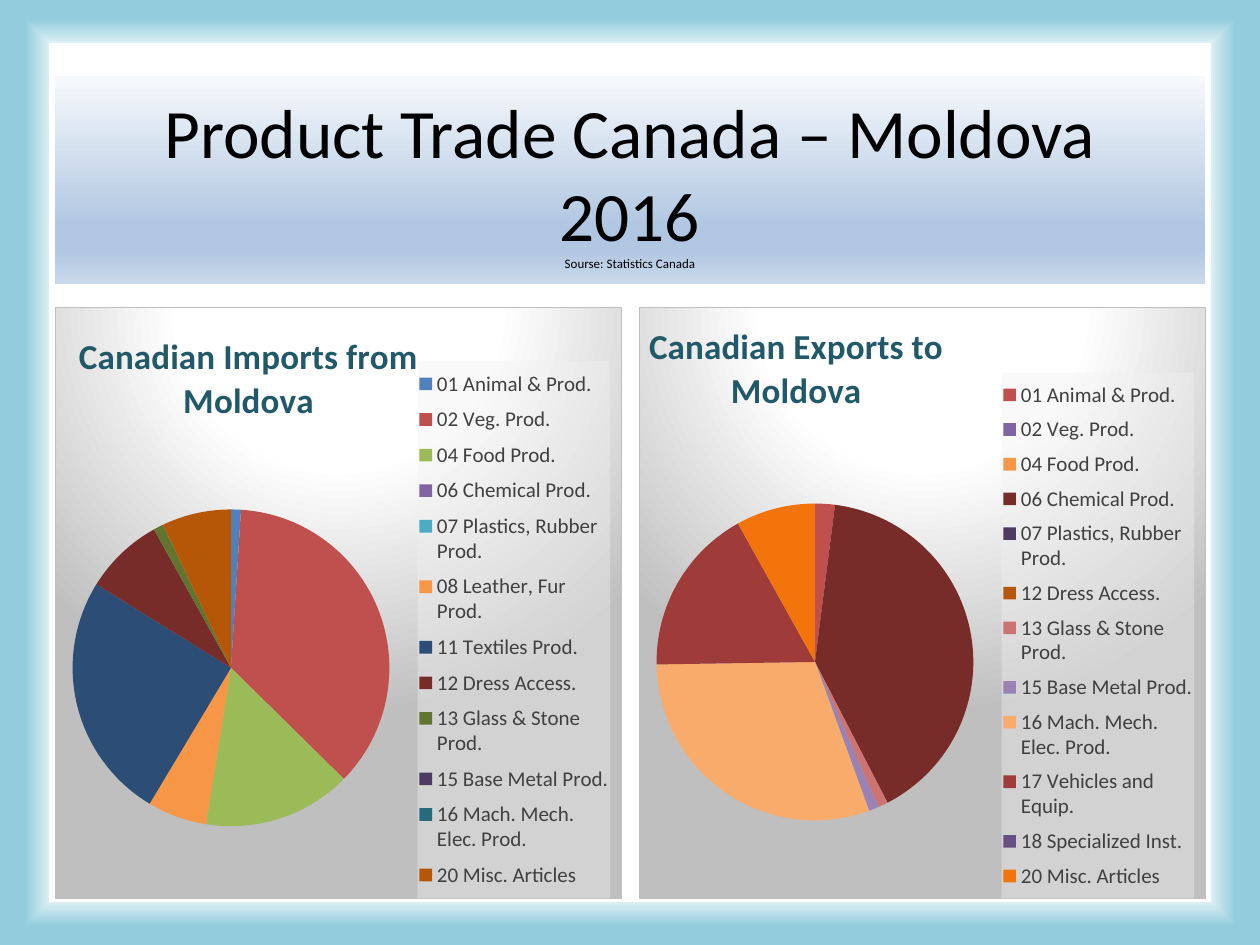
import pptx
import pptx.chart.data
import pptx.dml.color
import pptx.enum.chart
import pptx.enum.text
import pptx.oxml
import pptx.oxml.ns
import pptx.util

RGBColor = pptx.dml.color.RGBColor
BLACK = RGBColor(0x00, 0x00, 0x00)
WHITE = RGBColor(0xFF, 0xFF, 0xFF)
SILVER = RGBColor(0xBF, 0xBF, 0xBF)
PALE_GRAY = RGBColor(0xF2, 0xF2, 0xF2)
DARK_GRAY = RGBColor(0x40, 0x40, 0x40)
TEAL = RGBColor(0x21, 0x59, 0x68)
PALE_AQUA = RGBColor(0xDB, 0xEE, 0xF4)
AQUA = RGBColor(0x93, 0xCD, 0xDD)
ICE = RGBColor(0xF6, 0xF9, 0xFC)
SKY = RGBColor(0xB0, 0xC6, 0xE1)
MIST = RGBColor(0xCA, 0xD9, 0xEB)

NAMESPACES = pptx.oxml.ns.nsdecls("a", "c", "p")
LINEAR_DOWN = '<a:lin ang="5400000" scaled="0"/>'

IMPORTS = [
    ("01 Animal & Prod.", 1, "4F81BD"),
    ("02 Veg. Prod.", 36, "C0504D"),
    ("04 Food Prod.", 15, "9BBB59"),
    ("06 Chemical Prod.", 0, "8064A2"),
    ("07 Plastics, Rubber Prod.", 0, "4BACC6"),
    ("08 Leather, Fur Prod.", 6, "F79646"),
    ("11 Textiles Prod.", 25, "2C4D75"),
    ("12 Dress Access.", 8, "772C2A"),
    ("13 Glass & Stone Prod.", 1, "5F7530"),
    ("15 Base Metal Prod.", 0, "4D3B62"),
    ("16 Mach. Mech. Elec. Prod.", 0, "276A7C"),
    ("20 Misc. Articles", 7, "B65708"),
]
EXPORTS = [
    ("01 Animal & Prod.", 2, "C0504D"),
    ("02 Veg. Prod.", 0, "8064A2"),
    ("04 Food Prod.", 0, "F79646"),
    ("06 Chemical Prod.", 40, "772C2A"),
    ("07 Plastics, Rubber Prod.", 0, "4D3B62"),
    ("12 Dress Access.", 0, "B65708"),
    ("13 Glass & Stone Prod.", 1, "CD7371"),
    ("15 Base Metal Prod.", 1, "9983B5"),
    ("16 Mach. Mech. Elec. Prod.", 30, "F9AB6B"),
    ("17 Vehicles and Equip.", 17, "9F3B38"),
    ("18 Specialized Inst.", 0, "664F83"),
    ("20 Misc. Articles", 8, "F3740B"),
]


def px(length):
    return pptx.util.Emu(round(length * 914400 / 126))


def element(xml):
    tag, rest = xml.split(">", 1)
    return pptx.oxml.parse_xml(f"{tag} {NAMESPACES}>{rest}")


def gradient(stops, direction):
    marks = "".join(
        f'<a:gs pos="{percent * 1000}"><a:srgbClr val="{color}"/></a:gs>'
        for percent, color in stops
    )
    return f"<a:gradFill><a:gsLst>{marks}</a:gsLst>{direction}</a:gradFill>"


def radial(shape_name, left, top, right, bottom):
    return (
        f'<a:path path="{shape_name}"><a:fillToRect l="{left}000" t="{top}000" '
        f'r="{right}000" b="{bottom}000"/></a:path>'
    )


def place(part, position, **fractions):
    for old in part.findall(pptx.oxml.ns.qn("c:layout")):
        part.remove(old)
    sizes = "".join(f'<c:{key} val="{value}"/>' for key, value in fractions.items())
    part.insert(position, element(
        '<c:layout><c:manualLayout><c:xMode val="edge"/><c:yMode val="edge"/>'
        f"{sizes}</c:manualLayout></c:layout>"
    ))


class SlideBuilder:
    def __init__(self, slide, font_name):
        self.slide = slide
        self.font_name = font_name

    def format_font(self, font, size, color, bold=False):
        values = {"name": self.font_name, "size": pptx.util.Pt(size), "bold": bold}
        for name, value in values.items():
            setattr(font, name, value)
        font.color.rgb = color

    def background(self, stops):
        fill = gradient(stops, radial("shape", 50, 50, 50, 50))
        self.slide._element.cSld.insert(0, element(
            f"<p:bg><p:bgPr>{fill}<a:effectLst/></p:bgPr></p:bg>"
        ))

    def title(self, box, lines, stops):
        shape = self.slide.shapes.title
        for name, length in zip(("left", "top", "width", "height"), box):
            setattr(shape, name, px(length))
        shape._element.spPr.append(element(gradient(stops, LINEAR_DOWN)))
        frame = shape.text_frame
        frame.auto_size = pptx.enum.text.MSO_AUTO_SIZE.NONE
        frame.vertical_anchor = pptx.enum.text.MSO_ANCHOR.MIDDLE
        paragraph = frame.paragraphs[0]
        paragraph.alignment = pptx.enum.text.PP_ALIGN.CENTER
        for index, (text, size) in enumerate(lines):
            if index:
                paragraph.add_line_break()
            run = paragraph.add_run()
            run.text = text
            self.format_font(run.font, size, BLACK)

    def pie(self, box, series_name, title_lines, rows, title_at, pie_top, legend_top):
        names, values, colors = zip(*rows)
        data = pptx.chart.data.CategoryChartData()
        data.categories = names
        data.add_series(series_name, values)
        chart = self.slide.shapes.add_chart(
            pptx.enum.chart.XL_CHART_TYPE.PIE, *map(px, box), data
        ).chart
        self.format_font(chart.font, 10, BLACK)
        plot = chart.plots[0]
        plot.vary_by_categories = True
        for index, color in enumerate(colors):
            fill = plot.series[0].points[index].format.fill
            fill.solid()
            fill.fore_color.rgb = RGBColor.from_string(color)

        frame = chart.chart_title.text_frame
        frame.text = "\n".join(title_lines)
        for paragraph in frame.paragraphs:
            paragraph.alignment = pptx.enum.text.PP_ALIGN.CENTER
            self.format_font(paragraph.runs[0].font, 20, TEAL, True)

        chart.has_legend = True
        legend = chart.legend
        legend.position = pptx.enum.chart.XL_LEGEND_POSITION.RIGHT
        legend.include_in_layout = False
        self.format_font(legend.font, 12, DARK_GRAY)
        legend._element.find(pptx.oxml.ns.qn("c:overlay")).addnext(element(
            f'<c:spPr><a:solidFill><a:srgbClr val="{PALE_GRAY}">'
            '<a:alpha val="39000"/></a:srgbClr></a:solidFill></c:spPr>'
        ))

        place(chart.chart_title._element, 1, x=title_at[0], y=title_at[1])
        place(chart._chartSpace.chart.plotArea, 0, x=0.03, y=pie_top, w=0.56, h=0.54)
        place(legend._element, 1, x=0.64, y=legend_top, w=0.34, h=round(1 - legend_top, 2))

        stops = [(0, WHITE), (39, WHITE), (100, SILVER)]
        chart._chartSpace.chart.addnext(element(
            f"<c:spPr>{gradient(stops, radial('circle', 50, -80, 50, 180))}"
            f'<a:ln w="9525"><a:solidFill><a:srgbClr val="{SILVER}"/></a:solidFill></a:ln>'
            "</c:spPr>"
        ))


def main():
    presentation = pptx.Presentation()
    presentation.slide_width = px(1260)
    presentation.slide_height = px(945)
    slide = presentation.slides.add_slide(presentation.slide_layouts[5])
    builder = SlideBuilder(slide, "Calibri")
    builder.background([(91, WHITE), (91, PALE_AQUA), (96, AQUA)])
    builder.title(
        (55, 76, 1150, 208),
        [("Product Trade Canada – Moldova", 39.6), ("2016", 39.6),
         ("Sourse: Statistics Canada", 7.4)],
        [(0, ICE), (74, SKY), (83, SKY), (100, MIST)],
    )
    builder.pie((55, 307, 567, 592), "Canadian Imports from Moldova",
                ["Canadian Imports from Moldova"], IMPORTS, (0.03, 0.03), 0.34, 0.09)
    builder.pie((639, 307, 567, 592), "Series 1",
                ["Canadian Exports to", "Moldova"], EXPORTS, (0.01, 0.02), 0.33, 0.11)
    presentation.save("out.pptx")


if __name__ == "__main__":
    main()
